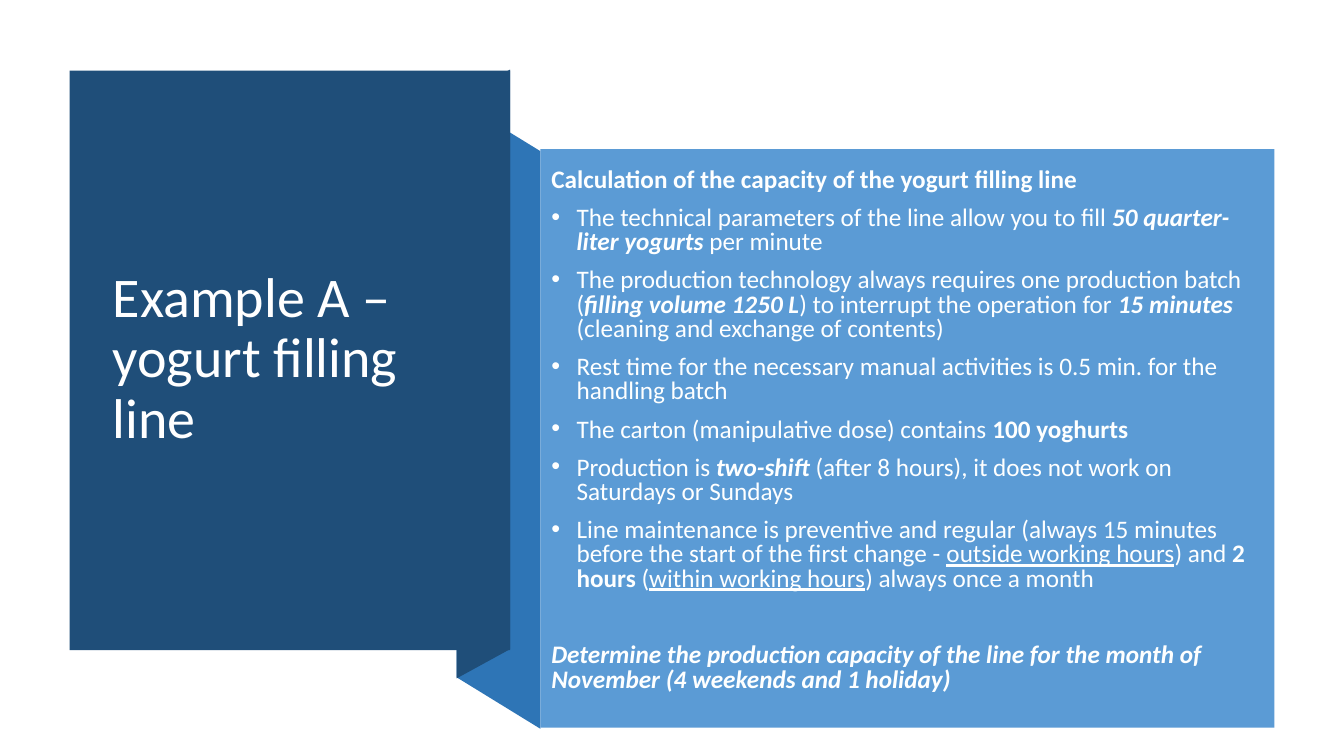
from lxml import etree
from pptx import Presentation
from pptx import util as u
from pptx.dml.color import RGBColor
from pptx.enum import shapes, text
from pptx.oxml.ns import qn

TITLE = "Example A – yogurt filling line"
HEADING = [("Calculation of the capacity of the yogurt filling line", "b")]
FACTS = [
    [("The technical parameters of the line allow you to fill ", ""),
     ("50 quarter-liter yogurts", "bi"), (" per minute", "")],
    [("The production technology always requires one production batch (", ""),
     ("filling volume 1250 L", "bi"), (") to interrupt the operation for ", ""),
     ("15 minutes ", "bi"), ("(cleaning and exchange of contents)", "")],
    [("Rest time for the necessary manual activities is 0.5 min. for the handling batch", "")],
    [("The carton (manipulative dose) contains ", ""), ("100 yoghurts", "b")],
    [("Production is ", ""), ("two-shift", "bi"),
     (" (after 8 hours), it does not work on Saturdays or Sundays", "")],
    [("Line maintenance is preventive and regular (always 15 minutes before the start "
      "of the first change - ", ""), ("outside working hours", "u"), (") and ", ""),
     ("2 hours", "b"), (" (", ""), ("within working hours", "u"),
     (") always once a month", "")],
]
TASK = [("Determine the production capacity of the line for the month of November "
         "(4 weekends and 1 holiday)", "bi")]

THEME = {
    "font": "Calibri", "title_size": 40, "body_size": 18,
    "title_text": "FFFFFF", "body_text": "FEFFFF",
    "navy": "1F4E79", "ribbon": "2E75B6", "panel": "5B9BD5",
}
RIBBON = [(5.36, 7.23), (4.53, 6.72), (4.53, 0.99), (5.36, 1.5)]
FOLD = [(5.06, 6.44), (4.53, 6.73), (4.53, 0.98), (5.06, 0.69)]
TITLE_CARD = (0.69, 0.7, 4.37, 5.75)
TITLE_AREA = (1.02, 1.07, 3.71, 4.99)
PANEL = (5.36, 1.48, 7.28, 5.74)
PANEL_AREA = (5.37, 1.59, 7.18, 5.37)
INDENT = u.Inches(0.25)


def paint(part, color):
    part.shadow.inherit = False
    part.fill.solid()
    part.fill.fore_color.rgb = RGBColor.from_string(THEME[color])
    part.line.fill.background()


def add_outline(slide, points, color):
    corners = [(u.Inches(x), u.Inches(y)) for x, y in points]
    builder = slide.shapes.build_freeform(*corners[0])
    builder.add_line_segments(corners[1:], close=True)
    paint(builder.convert_to_shape(), color)


def add_block(slide, area, color):
    block = slide.shapes.add_shape(shapes.MSO_SHAPE.RECTANGLE, *map(u.Inches, area))
    paint(block, color)


def add_frame(slide, area):
    frame = slide.shapes.add_textbox(*map(u.Inches, area)).text_frame
    frame.word_wrap = True
    frame.vertical_anchor = text.MSO_ANCHOR.MIDDLE
    return frame


def write(paragraph, runs, size, color, spacing, before=0, bullet=False):
    paragraph.line_spacing = spacing
    paragraph.space_before = u.Pt(before)
    if bullet:
        properties = paragraph._p.get_or_add_pPr()
        properties.set("marL", str(INDENT))
        properties.set("indent", str(-INDENT))
        etree.SubElement(properties, qn("a:buFont")).set("typeface", "Arial")
        etree.SubElement(properties, qn("a:buChar")).set("char", "•")
    for words, style in runs:
        run = paragraph.add_run()
        run.text = words
        font = run.font
        font.name = THEME["font"]
        font.size = u.Pt(THEME[size])
        font.color.rgb = RGBColor.from_string(THEME[color])
        font.bold = "b" in style
        font.italic = "i" in style
        font.underline = "u" in style


def main():
    deck = Presentation()
    deck.slide_width, deck.slide_height = u.Inches(13.33), u.Inches(7.5)
    slide = deck.slides.add_slide(deck.slide_layouts[6])

    add_outline(slide, RIBBON, "ribbon")
    add_outline(slide, FOLD, "navy")
    add_block(slide, TITLE_CARD, "navy")
    title = add_frame(slide, TITLE_AREA)
    write(title.paragraphs[0], [(TITLE, "")], "title_size", "title_text", 0.9)

    add_block(slide, PANEL, "panel")
    body = add_frame(slide, PANEL_AREA)
    write(body.paragraphs[0], HEADING, "body_size", "body_text", 0.8, before=10)
    for fact in FACTS:
        write(body.add_paragraph(), fact, "body_size", "body_text", 0.8,
              before=10, bullet=True)
    write(body.add_paragraph(), TASK, "body_size", "body_text", 0.8, before=37.5)

    deck.save("out.pptx")


if __name__ == "__main__":
    main()
